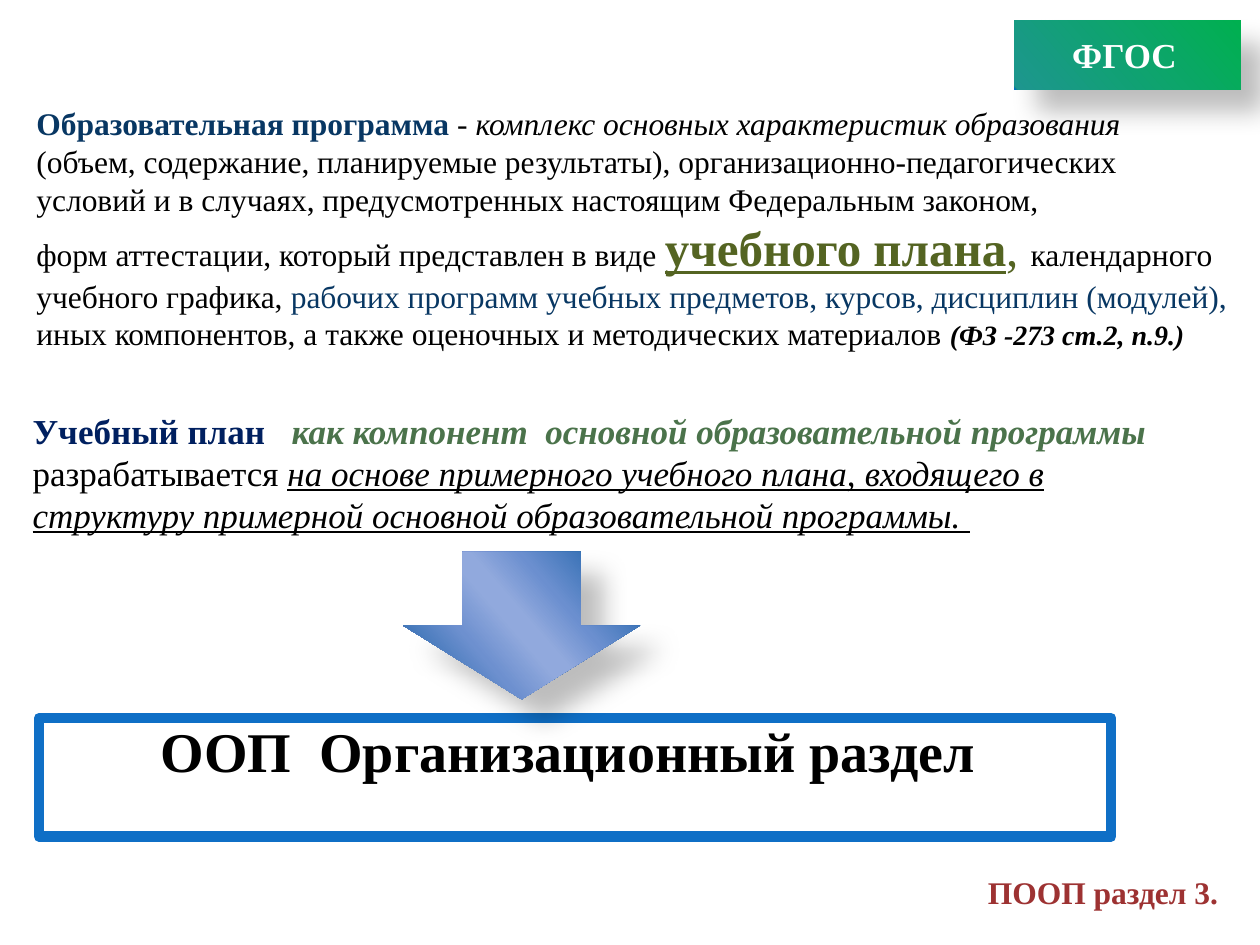
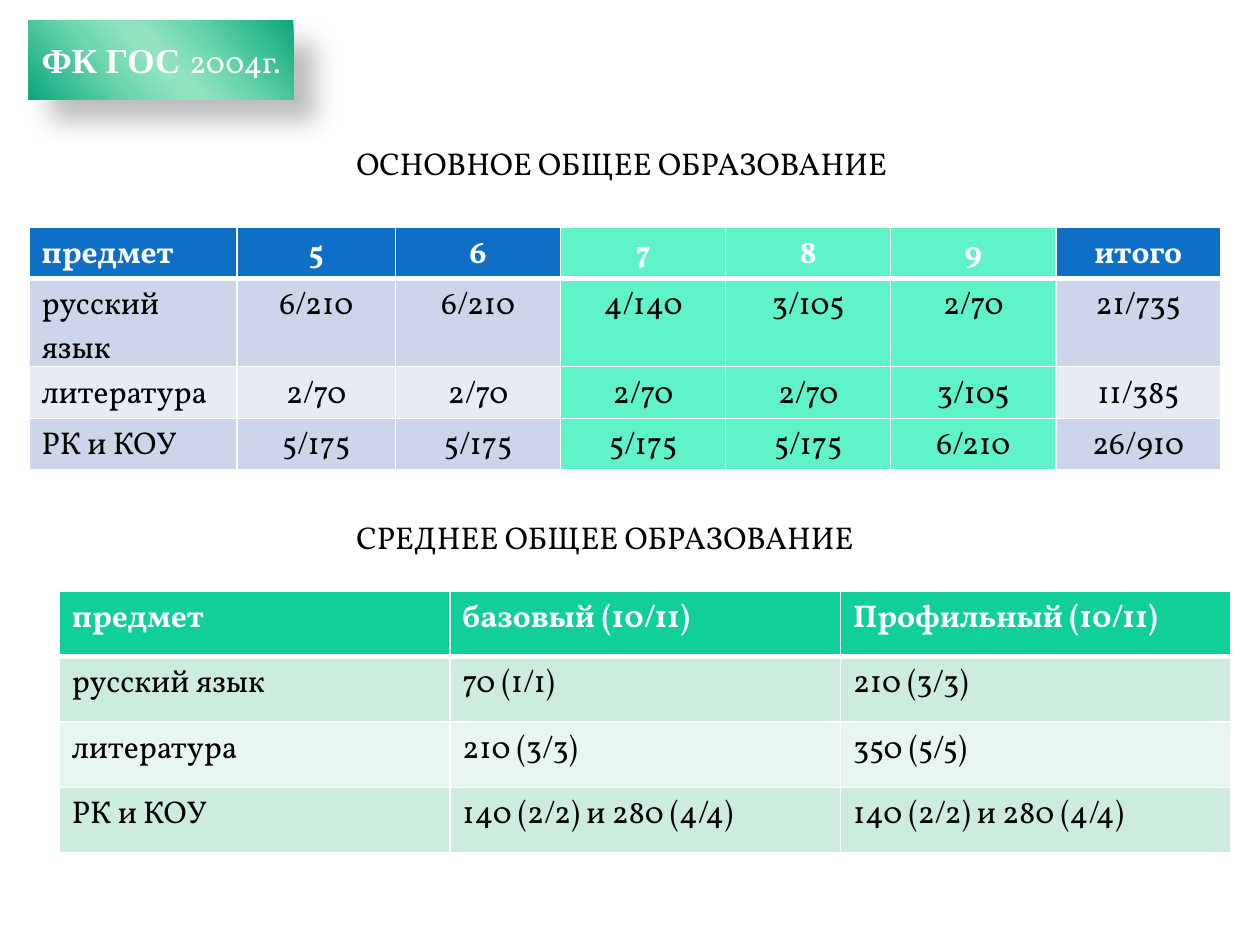
from lxml.etree import SubElement
from pptx import Presentation
from pptx.dml.color import RGBColor
from pptx.enum.shapes import MSO_SHAPE as SHAPE
from pptx.enum.text import MSO_ANCHOR as ANCHOR, MSO_AUTO_SIZE as AUTO, PP_ALIGN as ALIGN
from pptx.oxml.ns import qn
from pptx.util import Inches, Pt

SERIF = "Times New Roman"
BODY = "Vollkorn"
WHITE, BLACK, BLUE, NAVY = "FFFFFF", "000000", "0F6FC6", "083763"
MINT = "5FF3CA"
GRADIENT_ANGLE = 139

FGOS_STOPS = [(0, "00B050"), (99, "1D968E"), (100, "006DCF")]


def glossy(edge, left, middle, right):
    return list(zip((0, 33, 47, 53, 68, 100), (edge, left, middle, middle, right, edge)))


def rgb(value):
    return RGBColor.from_string(value)


def add_colour(parent, value):
    return SubElement(parent, qn("a:srgbClr"), val=value)


class Deck:
    def __init__(self):
        self.prs = Presentation()
        self.prs.slide_width, self.prs.slide_height = Inches(10), Inches(7.5)
        self.s = None

    def slide(self):
        self.s = self.prs.slides.add_slide(self.prs.slide_layouts[6])

    def fill_text(self, tf, paragraphs, align=ALIGN.LEFT, **base):
        for i, runs in enumerate(paragraphs):
            p = tf.add_paragraph() if i else tf.paragraphs[0]
            p.alignment = align
            for text, own in runs:
                r = p.add_run()
                r.text = text
                style = {"name": SERIF, "size": 18, "bold": False, "color": BLACK, **base, **own}
                r.font.color.rgb = rgb(style.pop("color"))
                style["size"] = Pt(style["size"])
                for key, value in style.items():
                    setattr(r.font, key, value)

    def text(self, box, paragraphs, wrap=True, **base):
        tf = self.s.shapes.add_textbox(*map(Inches, box)).text_frame
        tf.word_wrap = wrap
        tf.auto_size = AUTO.SHAPE_TO_FIT_TEXT
        self.fill_text(tf, paragraphs, **base)

    def shape(self, kind, box):
        sp = self.s.shapes.add_shape(kind, *map(Inches, box))
        sp.shadow.inherit = False
        sp.fill.background()
        sp.line.fill.background()
        return sp

    def frame(self, box, runs, **base):
        sp = self.shape(SHAPE.RECTANGLE, box)
        sp.line.color.rgb = rgb(BLUE)
        sp.line.width = Pt(6)
        tf = sp.text_frame
        tf.vertical_anchor = ANCHOR.TOP
        self.fill_text(tf, [runs], align=ALIGN.CENTER, **base)
        p = tf.paragraphs[0]
        p.line_spacing, p.space_before = 0.9, Pt(6.4)

    def glow(self, kind, box, stops):
        sp = self.shape(kind, box)
        sp.fill.gradient()
        sp.fill.gradient_angle = 360 - GRADIENT_ANGLE
        stop_list = sp._element.spPr.find(".//" + qn("a:gsLst"))
        for old in list(stop_list):
            stop_list.remove(old)
        for pos, value in stops:
            add_colour(SubElement(stop_list, qn("a:gs"), pos=str(pos * 1000)), value)
        effects = sp._element.spPr.find(qn("a:effectLst"))
        shadow = SubElement(effects, qn("a:outerShdw"), blurRad=str(Pt(15)), dist=str(Pt(18)),
                            dir=str(45 * 60000), algn="tl", rotWithShape="0")
        SubElement(add_colour(shadow, BLACK), qn("a:alpha"), val="26000")
        return sp

    def badge(self, box, stops, title, suffix):
        tf = self.glow(SHAPE.RECTANGLE, box, stops).text_frame
        tf.vertical_anchor = ANCHOR.MIDDLE
        runs = [(title, {"size": 20, "bold": True}), (suffix, {"name": BODY})]
        self.fill_text(tf, [runs], align=ALIGN.CENTER, color=WHITE)

    def cell_borders(self, cell, is_header):
        props = cell._tc.get_or_add_tcPr()
        for side in "LRTB":
            width = 3 if is_header and side == "B" else 1
            ln = SubElement(props, qn("a:ln" + side), w=str(Pt(width)))
            add_colour(SubElement(ln, qn("a:solidFill")), WHITE)

    def table(self, left, top, widths, row_height, rows, header, bands,
              accent_cols=(), value_align=ALIGN.LEFT):
        box = (left, top, sum(widths), row_height * len(rows))
        table = self.s.shapes.add_table(len(rows), len(widths), *map(Inches, box)).table
        for col, width in zip(table.columns, widths):
            col.width = Inches(width)
        for i, row in enumerate(rows):
            table.rows[i].height = Inches(row_height)
            is_header = i == 0
            row_fill = header if is_header else bands[(i - 1) % 2]
            for j, value in enumerate(row):
                cell = table.cell(i, j)
                self.cell_borders(cell, is_header)
                cell.fill.solid()
                cell.fill.fore_color.rgb = rgb(MINT if j in accent_cols else row_fill)
                self.fill_text(cell.text_frame, [[(value, {})]], name=BODY, bold=is_header,
                               align=value_align if j else ALIGN.LEFT,
                               color=WHITE if is_header else BLACK)


def programme_slide(d):
    d.slide()
    d.frame((0.31, 5.7, 8.51, 0.94), [("ООП  Организационный раздел ", {})], size=32, bold=True)
    d.text((0.16, 3.2, 9.42, 1.11), [[
        ("Учебный план   ", {"color": "002060", "bold": True}),
        ("как компонент  основной образовательной программы  ",
         {"color": "4B734B", "bold": True, "italic": True}),
        ("разрабатывается ", {}),
        ("на основе примерного учебного плана,", {"italic": True, "underline": True}),
        (" ", {"underline": True}),
        ("входящего в структуру примерной основной образовательной программы. ",
         {"italic": True, "underline": True}),
    ]], size=20)
    d.text((7.66, 6.88, 2.17, 0.4), [[("ПООП раздел 3. ", {})]],
           align=ALIGN.RIGHT, color="9D3232", bold=True)
    d.glow(SHAPE.DOWN_ARROW, (3.2, 4.38, 1.88, 1.17),
           glossy("0C599F", "6B8FCF", "91A9DD", "6D90CF"))
    key_term = {"size": 28, "color": "546422"}
    d.text((0.19, 0.78, 9.81, 2.36), [
        [("Образовательная программа ", {"color": NAVY, "bold": True}), ("- ", {}),
         ("комплекс основных характеристик образования", {"italic": True})],
        [("(объем, содержание, планируемые результаты), организационно-педагогических", {})],
        [("условий и в случаях, предусмотренных настоящим Федеральным законом,", {})],
        [("форм аттестации, который представлен в виде ", {}),
         ("учебного плана", {**key_term, "bold": True, "underline": True}),
         (", ", key_term), ("календарного", {})],
        [("учебного графика, ", {}),
         ("рабочих программ учебных предметов, курсов, дисциплин (модулей),", {"color": NAVY})],
        [("иных компонентов, а также оценочных и методических материалов ", {}),
         ("(ФЗ -273 ст.2, п.9.)", {"size": 16, "bold": True, "italic": True})],
    ], wrap=False)
    d.badge((8.05, 0.16, 1.8, 0.55), FGOS_STOPS, "ФГОС", " ")


def hours_slide(d):
    d.slide()
    d.table(0.23, 1.8, [1.65, 1.26] + [1.31] * 5, 0.41, [
        ("предмет", "5", "6", "7", "8", "9", "итого"),
        ("русский язык", "6/210", "6/210", "4/140", "3/105", "2/70", "21/735"),
        ("литература", "2/70", "2/70", "2/70", "2/70", "3/105", "11/385"),
        ("РК и КОУ", "5/175", "5/175", "5/175", "5/175", "6/210", "26/910"),
    ], BLUE, ("CCD5EA", "E7EBF5"), accent_cols=(3, 4, 5), value_align=ALIGN.CENTER)
    for top, level in ((1.09, "ОСНОВНОЕ"), (4.06, "СРЕДНЕЕ")):
        d.text((2.73, top, 4.85, 0.4), [[(level + " ОБЩЕЕ ОБРАЗОВАНИЕ", {})]], name=BODY)
    d.table(0.47, 4.69, [3.1] * 3, 0.52, [
        ("предмет", "базовый (10/11)", "Профильный (10/11)"),
        ("русский язык", "70 (1/1)", "210 (3/3)"),
        ("литература", "210 (3/3)", "350 (5/5)"),
        ("РК и КОУ", "140 (2/2) и 280 (4/4)", "140 (2/2) и 280 (4/4)"),
    ], "10CF9B", ("CCEDDE", "E7F6EF"))
    d.badge((0.23, 0.16, 2.1, 0.63), glossy("0DA67C", "6BD6AD", "91E3C0", "6DD7AE"),
            "ФК ГОС ", "2004г.")


def main():
    d = Deck()
    programme_slide(d)
    hours_slide(d)
    d.prs.save("out.pptx")


if __name__ == "__main__":
    main()
